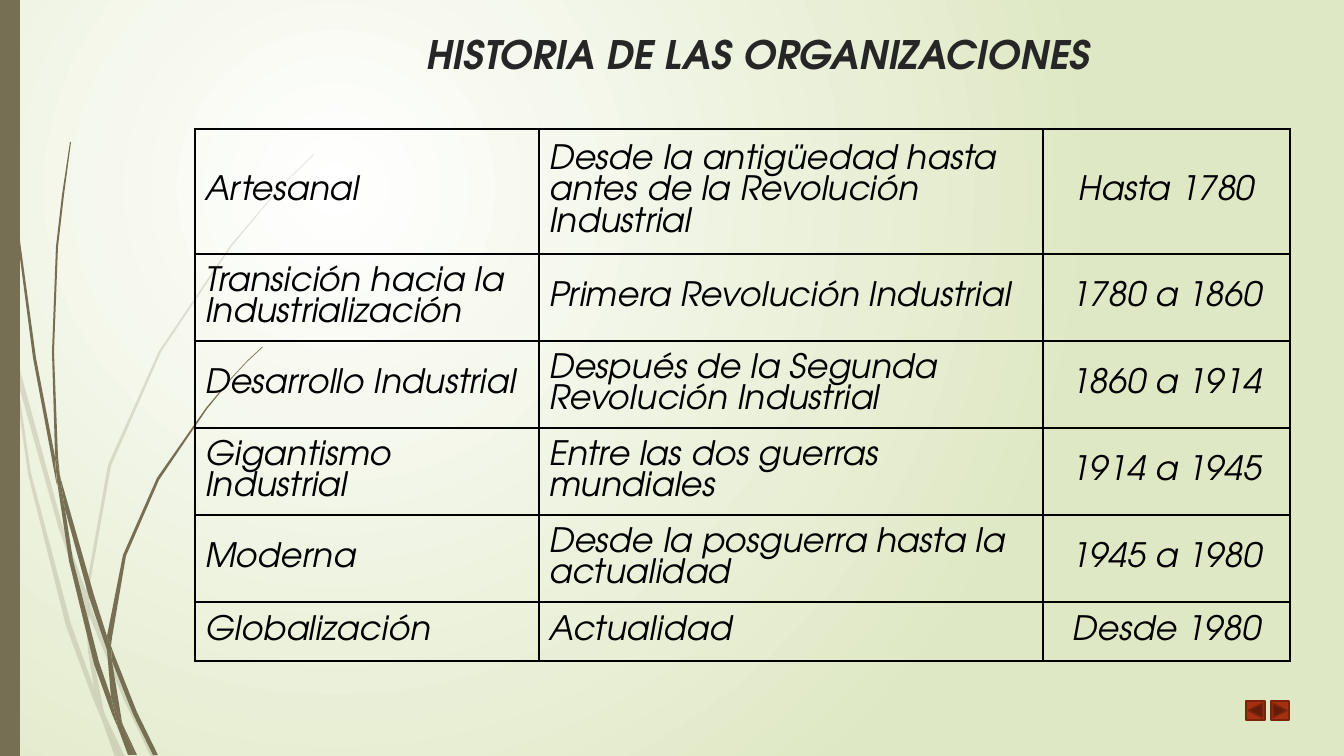
import pptx
import pptx.util
import pptx.dml.color
import pptx.enum.shapes
import pptx.enum.text
import pptx.oxml
import pptx.oxml.ns
import lxml.etree

# Content
TITLE = "HISTORIA DE LAS ORGANIZACIONES"
STAGES = [
    ("Artesanal", "Desde la antigüedad hasta antes de la Revolución Industrial", "Hasta 1780"),
    ("Transición hacia la Industrialización", "Primera Revolución Industrial", "1780 a 1860"),
    ("Desarrollo Industrial", "Después de la Segunda Revolución Industrial", "1860 a 1914"),
    ("Gigantismo Industrial", "Entre las dos guerras mundiales", "1914 a 1945"),
    ("Moderna", "Desde la posguerra hasta la actualidad", "1945 a 1980"),
    ("Globalización", "Actualidad", "Desde 1980"),
]
FONT = "TeX Gyre Adventor"
COLORS = {"white": "FFFFFF", "green": "DFE8C4", "olive": "766F54",
          "title": "262626", "black": "000000", "button": "A53010", "edge": "7A240C"}
PLAIN_TABLE = "{2D5ABB26-0587-4C30-8999-92F81FD0307C}"

# Layout in px
PX = 914400 / 100.8
SLIDE = (1344, 756)
STRIPE = (0, 0, 20, 756)
TITLE_BOX = (243, 25, 857, 104)
TABLE_AT = (195, 129)
COLUMNS = (344, 504, 247)
ROWS = (125, 87, 87, 87, 87, 59)
BUTTONS = [("ACTION_BUTTON_FORWARD_OR_NEXT", (1271, 701, 18, 19)),
           ("ACTION_BUTTON_BACK_OR_PREVIOUS", (1246, 701, 19, 19))]

# Grass: outlines of the pale leaves (20 % opacity) and of the dark ones
PALE_GRASS = [
    [(11, 353), (9, 325), (0, 284), (0, 301), (10, 347)],
    [(58, 526), (85, 604), (86, 591), (62, 524), (14, 348), (17, 379)],
    [(93, 612), (89, 601), (89, 615), (124, 700), (151, 757), (156, 757), (128, 698)],
    [(120, 757), (125, 757), (106, 717)],
    [(94, 688), (71, 624), (31, 473), (17, 379), (11, 353), (28, 474), (66, 626),
     (93, 699), (102, 720), (100, 713)],
    [(85, 604), (88, 651), (94, 688), (97, 698), (106, 717), (104, 712), (92, 651),
     (89, 615), (89, 613)],
    [(89, 589), (111, 466), (161, 352), (231, 247), (270, 200), (292, 176), (314, 155),
     (314, 154), (291, 176), (270, 199), (230, 246), (159, 351), (108, 465), (86, 589),
     (86, 591), (89, 601)],
    [(102, 720), (115, 757), (120, 757)],
    [(89, 613), (89, 615), (89, 601), (86, 591), (85, 604)],
    [(97, 698), (94, 688), (100, 713), (102, 720), (120, 757), (106, 717)],
]
DARK_GRASS = [
    [(7, 111), (17, 235), (33, 358), (56, 481), (57, 485), (55, 461), (55, 457), (36, 358),
     (19, 234), (8, 110), (5, 48), (4, 0), (3, 0), (4, 48)],
    [(89, 597), (107, 650), (107, 638), (107, 636), (94, 595), (60, 476), (65, 509)],
    [(114, 654), (111, 646), (112, 661), (133, 714), (153, 755), (158, 755), (137, 712)],
    [(111, 697), (99, 662), (73, 560), (65, 509), (57, 481), (69, 561), (94, 664),
     (112, 714), (118, 728), (117, 723)],
    [(60, 476), (58, 457), (54, 352), (58, 247), (64, 195), (71, 142), (70, 142), (62, 195),
     (56, 247), (52, 352), (55, 453)],
    [(134, 755), (137, 755), (123, 725)],
    [(57, 481), (65, 509), (60, 476), (55, 453), (55, 457)],
    [(112, 638), (126, 556), (159, 480), (207, 409), (233, 377), (247, 362), (263, 347),
     (262, 347), (247, 361), (233, 376), (206, 408), (157, 478), (123, 555), (107, 636),
     (111, 646)],
    [(118, 728), (128, 755), (132, 755)],
    [(107, 650), (111, 697), (117, 712), (123, 725), (122, 722), (112, 661), (110, 656)],
    [(107, 650), (110, 656), (112, 661), (111, 646), (107, 636), (107, 638)],
    [(117, 712), (111, 697), (117, 723), (118, 728), (131, 755), (134, 755), (123, 725)],
]


def emu(length):
    return pptx.util.Emu(round(length * PX))


def rgb(name):
    return pptx.dml.color.RGBColor.from_string(COLORS[name])


def write(frame, text, *, size, color, bold=False, align="LEFT", spacing=None, before=None):
    frame.word_wrap = True
    para = frame.paragraphs[0]
    para.alignment = pptx.enum.text.PP_ALIGN[align]
    if spacing:
        para.line_spacing = pptx.util.Pt(spacing)
    if before:
        para.space_before = pptx.util.Pt(before)
    span = para.add_run()
    span.text = text
    span.font.name = FONT
    span.font.size = pptx.util.Pt(size)
    span.font.bold = bold
    span.font.italic = True
    span.font.color.rgb = rgb(color)


def paint(shape, fill, line=None, opacity=100):
    shape.shadow.inherit = False
    shape.fill.solid()
    shape.fill.fore_color.rgb = rgb(fill)
    if opacity < 100:
        color = shape.element.spPr.find(".//" + pptx.oxml.ns.qn("a:srgbClr"))
        lxml.etree.SubElement(color, pptx.oxml.ns.qn("a:alpha"), val=str(opacity * 1000))
    if line:
        shape.line.color.rgb = rgb(line)
        shape.line.width = pptx.util.Pt(1.25)
    else:
        shape.line.fill.background()


def draw_leaf(shapes, outline, opacity):
    corners = [(emu(x), emu(y)) for x, y in outline]
    builder = shapes.build_freeform(*corners[0])
    builder.add_line_segments(corners[1:], close=True)
    paint(builder.convert_to_shape(), "olive", opacity=opacity)


def set_borders(cell, widths):
    properties = cell._tc.get_or_add_tcPr()
    for index, (side, width) in enumerate(widths.items()):
        properties.insert(index, pptx.oxml.parse_xml(
            f'<a:ln{side} {pptx.oxml.ns.nsdecls("a")} w="{int(pptx.util.Pt(width))}" '
            'cap="flat" cmpd="sng" algn="ctr"><a:solidFill>'
            f'<a:srgbClr val="{COLORS["black"]}"/></a:solidFill>'
            f'<a:prstDash val="solid"/></a:ln{side}>'))


def main():
    deck = pptx.Presentation()
    deck.slide_width, deck.slide_height = map(emu, SLIDE)
    page = deck.slides.add_slide(deck.slide_layouts[6])
    shapes = page.shapes

    # Background: round glow from the upper left
    fill = page.background.fill
    fill.gradient()
    for stop, name in zip(fill.gradient_stops, ("white", "green")):
        stop.color.rgb = rgb(name)
    linear = page.element.find(".//" + pptx.oxml.ns.qn("a:lin"))
    linear.getparent().replace(linear, pptx.oxml.parse_xml(
        f'<a:path {pptx.oxml.ns.nsdecls("a")} path="circle">'
        '<a:fillToRect l="50000" t="50000" r="100000" b="100000"/></a:path>'))

    # Grass and side stripe
    for opacity, grass in ((20, PALE_GRASS), (100, DARK_GRASS)):
        for outline in grass:
            draw_leaf(shapes, outline, opacity)
    stripe = shapes.add_shape(pptx.enum.shapes.MSO_SHAPE.RECTANGLE, *map(emu, STRIPE))
    paint(stripe, "olive")

    # Title
    box = shapes.add_textbox(*map(emu, TITLE_BOX))
    write(box.text_frame, TITLE, size=28, color="title", bold=True, align="RIGHT")

    # Table of stages
    holder = shapes.add_table(len(ROWS), len(COLUMNS), *map(emu, TABLE_AT),
                              emu(sum(COLUMNS)), emu(sum(ROWS)))
    holder.element.find(".//" + pptx.oxml.ns.qn("a:tableStyleId")).text = PLAIN_TABLE
    table = holder.table
    table.first_row = table.horz_banding = False
    for column, width in zip(table.columns, COLUMNS):
        column.width = emu(width)
    for row, height in zip(table.rows, ROWS):
        row.height = emu(height)
    last_row, last_column = len(ROWS) - 1, len(COLUMNS) - 1
    for r, stage in enumerate(STAGES):
        for c, text in enumerate(stage):
            cell = table.cell(r, c)
            cell.fill.background()
            write(cell.text_frame, text, size=24, color="black", spacing=22.5, before=5,
                  align="CENTER" if c == last_column else "LEFT")
            cell.vertical_anchor = pptx.enum.text.MSO_ANCHOR.MIDDLE
            outer = {"L": c == 0, "R": c == last_column, "T": r == 0, "B": r == last_row}
            set_borders(cell, {side: 2.25 if edge else 1 for side, edge in outer.items()})

    # Navigation buttons
    for kind, place in BUTTONS:
        button = shapes.add_shape(pptx.enum.shapes.MSO_SHAPE[kind], *map(emu, place))
        paint(button, "button", line="edge")

    deck.save("out.pptx")


if __name__ == "__main__":
    main()
